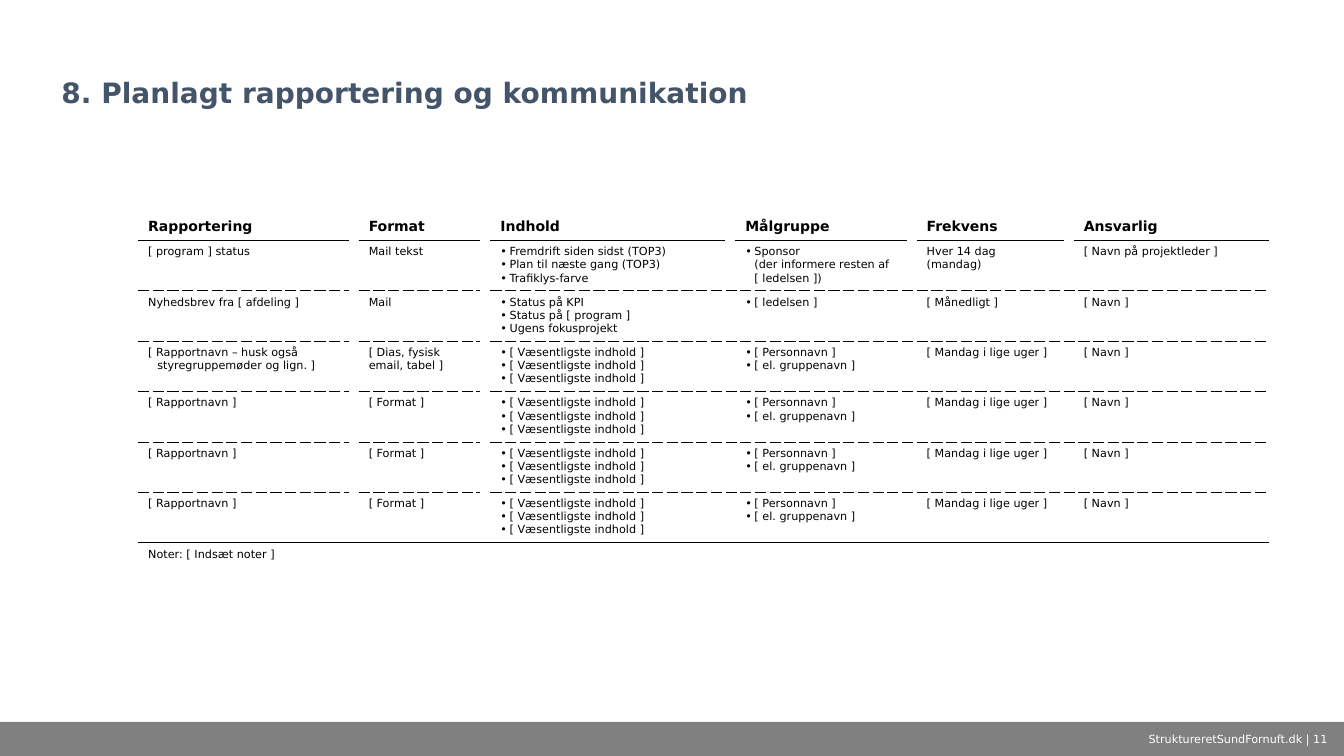
"""Builds the slide on planned reporting and communication."""
from lxml import etree
from pptx import Presentation
from pptx.dml.color import RGBColor
from pptx.enum.shapes import MSO_SHAPE
from pptx.enum.text import MSO_ANCHOR, PP_ALIGN
from pptx.oxml.ns import qn
from pptx.util import Cm, Pt

RECTANGLE = MSO_SHAPE.RECTANGLE
MIDDLE, BOTTOM = MSO_ANCHOR.MIDDLE, MSO_ANCHOR.BOTTOM
LEFT, CENTER = PP_ALIGN.LEFT, PP_ALIGN.CENTER
FONT = "DejaVu Sans"
COLORS = {"title": "44546A", "text": "000000", "footer": "808080", "footer_text": "FFFFFF"}
NO_STYLE_NO_GRID = "{2D5ABB26-0587-4C30-8999-92F81FD0307C}"
HANGING = Cm(0.23)

HEADERS = ["Rapportering", "Format", "Indhold", "Målgruppe", "Frekvens", "Ansvarlig"]
CONTENT = "\n".join(["[ Væsentligste indhold ]"] * 3)
AUDIENCE = "[ Personnavn ]\n[ el. gruppenavn ]"
WEEKLY = "[ Mandag i lige uger ]"
STANDARD = ["[ Rapportnavn ]", "[ Format ]", CONTENT, AUDIENCE, WEEKLY, "[ Navn ]"]
REPORTS = [
    ["[ program ] status", "Mail tekst",
     "Fremdrift siden sidst (TOP3)\nPlan til næste gang (TOP3)\nTrafiklys-farve",
     "Sponsor\v(der informere resten af [ ledelsen ])",
     "Hver 14 dag\v(mandag)", "[ Navn på projektleder ]"],
    ["Nyhedsbrev fra [ afdeling ]", "Mail",
     "Status på KPI\nStatus på [ program ]\nUgens fokusprojekt",
     "[ ledelsen ]", "[ Månedligt ]", "[ Navn ]"],
    ["[ Rapportnavn – husk også styregruppemøder og lign. ]",
     "[ Dias, fysisk email, tabel ]", CONTENT, AUDIENCE, WEEKLY, "[ Navn ]"],
    STANDARD, STANDARD, STANDARD,
]
MARGIN_WIDTH, GAP_WIDTH = 0.61, 0.25
TEXT_WIDTHS = [5.31, 3.07, 5.92, 4.32, 3.71, 4.93]
ROW_HEIGHTS = [0.66, 0.66] + [1.24] * len(REPORTS) + [1.2]
HEADER_ROW, LAST_REPORT_ROW = 1, 1 + len(REPORTS)
NOTES_ROW = LAST_REPORT_ROW + 1


def write_text(frame, text, size=8, color="text", bold=False, align=LEFT,
               bullet=False, hanging=False, spacing=None):
    """Fill a text frame; \\n starts a paragraph and \\v a new line."""
    frame.word_wrap = True
    for number, line in enumerate(text.split("\n")):
        paragraph = frame.add_paragraph() if number else frame.paragraphs[0]
        paragraph.alignment = align
        if spacing:
            paragraph.line_spacing = spacing
        properties = paragraph._p.get_or_add_pPr()
        if hanging or bullet:
            properties.set("marL", str(HANGING))
            properties.set("indent", str(-HANGING))
        if bullet:
            etree.SubElement(properties, qn("a:buFont")).set("typeface", FONT)
            etree.SubElement(properties, qn("a:buChar")).set("char", "•")
        paragraph._p.get_or_add_endParaRPr().set("sz", str(size * 100))
        for index, piece in enumerate(line.split("\v") if line else []):
            if index:
                paragraph.add_line_break()
            run = paragraph.add_run()
            run.text = piece
            run.font.name, run.font.size, run.font.bold = FONT, Pt(size), bold
            run.font.color.rgb = RGBColor.from_string(COLORS[color])


def add_border(cell, edge, width, dash):
    """Put a border line on one edge of a cell, before its fill."""
    line = etree.Element(qn(f"a:{edge}"), w=str(Pt(width)))
    fill = etree.SubElement(line, qn("a:solidFill"))
    etree.SubElement(fill, qn("a:srgbClr")).set("val", COLORS["text"])
    etree.SubElement(line, qn("a:prstDash")).set("val", dash)
    cell._tc.get_or_add_tcPr().insert(0, line)


presentation = Presentation()
presentation.slide_width, presentation.slide_height = Cm(33.87), Cm(19.05)
slide = presentation.slides.add_slide(presentation.slide_layouts[6])

footer_bar = slide.shapes.add_shape(RECTANGLE, Cm(0), Cm(18.19), Cm(33.87), Cm(0.86))
footer_bar.shadow.inherit = False
footer_bar.fill.solid()
footer_bar.fill.fore_color.rgb = RGBColor.from_string(COLORS["footer"])
footer_bar.line.fill.background()

title = slide.shapes.add_textbox(Cm(1.3), Cm(0.43), Cm(31.27), Cm(2.46))
title.text_frame.vertical_anchor = BOTTOM
write_text(title.text_frame, "8. Planlagt rapportering og kommunikation",
           size=20, color="title", bold=True, spacing=0.9)

footer = slide.shapes.add_textbox(Cm(28.55), Cm(18.19), Cm(5.31), Cm(0.86))
footer.text_frame.vertical_anchor = MIDDLE
write_text(footer.text_frame, "StruktureretSundFornuft.dk | 11",
           color="footer_text", align=CENTER)

column_widths = [MARGIN_WIDTH]
for text_width in TEXT_WIDTHS:
    column_widths += [text_width, GAP_WIDTH]
column_widths[-1] = MARGIN_WIDTH
last_column = len(column_widths) - 1

table_frame = slide.shapes.add_table(
    len(ROW_HEIGHTS), len(column_widths), Cm(2.87), Cm(4.72),
    Cm(sum(column_widths)), Cm(sum(ROW_HEIGHTS)))
table = table_frame.table
table.first_row = table.horz_banding = False
table._tbl.tblPr.find(qn("a:tableStyleId")).text = NO_STYLE_NO_GRID
for column, width in zip(table.columns, column_widths):
    column.width = Cm(width)
for row, height in zip(table.rows, ROW_HEIGHTS):
    row.height = Cm(height)
table.cell(NOTES_ROW, 1).merge(table.cell(NOTES_ROW, last_column - 1))

for row_index in range(len(ROW_HEIGHTS)):
    for column_index in range(len(column_widths)):
        cell = table.cell(row_index, column_index)
        cell.fill.background()
        is_text = column_index % 2 == 1
        field = column_index // 2
        text, size, bullet, hanging = "", 8, False, False
        if is_text and row_index == HEADER_ROW:
            text, size = HEADERS[field], 10
            cell.vertical_anchor = MIDDLE
        elif is_text and HEADER_ROW < row_index <= LAST_REPORT_ROW:
            text = REPORTS[row_index - HEADER_ROW - 1][field]
            bullet = HEADERS[field] in ("Indhold", "Målgruppe")
            hanging = field == 0 and row_index > HEADER_ROW + 1
        elif row_index == NOTES_ROW and column_index == 1:
            text = "Noter: [ Indsæt noter ]"
        if not is_text:
            cell.margin_left = cell.margin_right = Cm(0)
        write_text(cell.text_frame, text, size=size, bold=row_index == HEADER_ROW,
                   bullet=bullet, hanging=hanging)
        if column_index in (0, last_column):
            continue
        for edge, line_row in (("lnB", row_index), ("lnT", row_index - 1)):
            if line_row == HEADER_ROW and is_text:
                add_border(cell, edge, 0.5, "solid")
            elif line_row == LAST_REPORT_ROW:
                add_border(cell, edge, 1, "solid")
            elif HEADER_ROW < line_row < LAST_REPORT_ROW and (is_text or column_index > 4):
                add_border(cell, edge, 0.5, "dash")

presentation.save("out.pptx")
